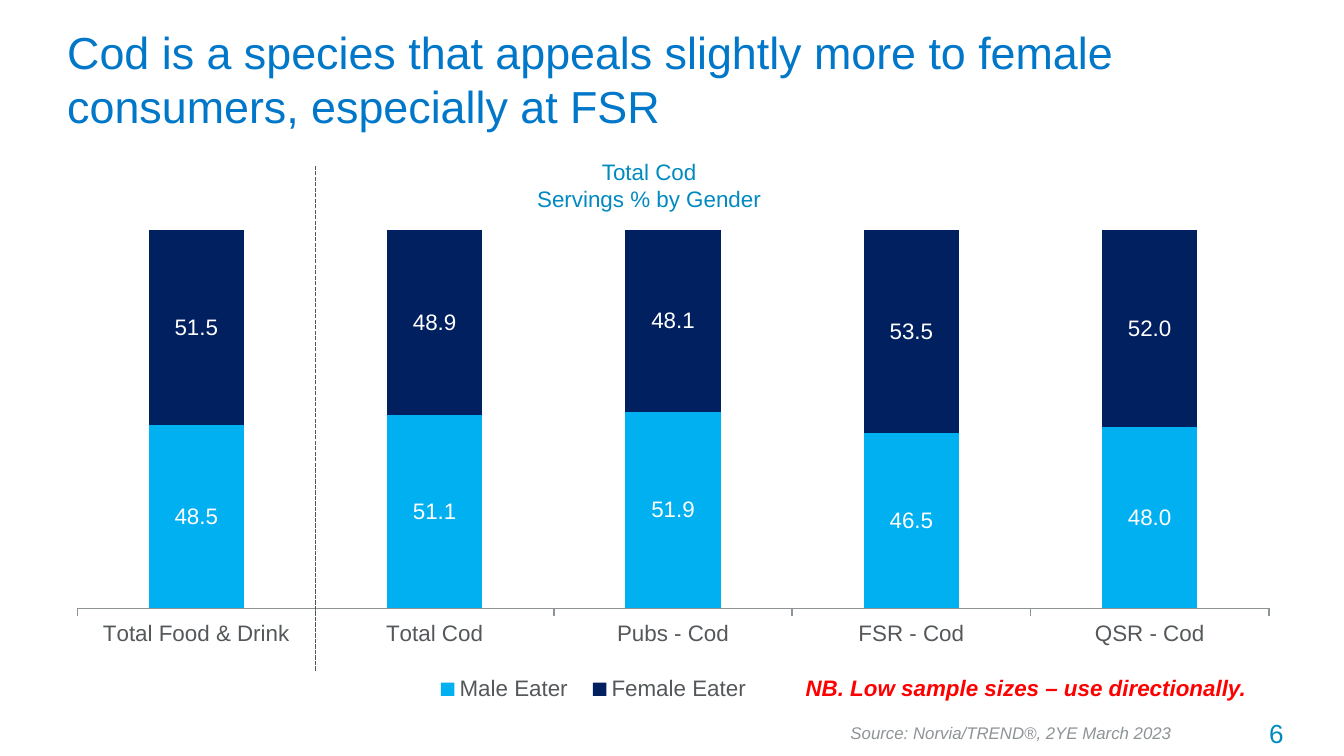
from lxml.etree import SubElement
from pptx import Presentation
from pptx.chart.data import CategoryChartData
from pptx.dml.color import RGBColor
from pptx.enum.chart import XL_CHART_TYPE, XL_LEGEND_POSITION, XL_TICK_MARK
from pptx.enum.dml import MSO_LINE
from pptx.enum.shapes import MSO_CONNECTOR
from pptx.enum.text import MSO_ANCHOR, MSO_AUTO_SIZE, PP_ALIGN
from pptx.oxml import parse_xml
from pptx.oxml.ns import nsdecls, qn
from pptx.util import Inches, Pt

FONT = "Arial"
TITLE_BLUE = RGBColor(0x00, 0x77, 0xC8)
TEAL = RGBColor(0x00, 0x8A, 0xC0)
SKY = RGBColor(0x00, 0xB0, 0xF0)
NAVY = RGBColor(0x00, 0x20, 0x60)
DARK_GREY = RGBColor(0x54, 0x58, 0x5A)
GREY = RGBColor(0x8E, 0x93, 0x96)
RED = RGBColor(0xFF, 0x00, 0x00)
WHITE = RGBColor(0xFF, 0xFF, 0xFF)

LEFT, WIDTH = 0.4, 9.17
CHART_TOP, CHART_HEIGHT = 1.52, 3.75
PLOT_X, PLOT_Y, PLOT_W, PLOT_H = 0.019, 0.052, 0.967, 0.75

categories = ["Total Food & Drink", "Total Cod", "Pubs - Cod", "FSR - Cod", "QSR - Cod"]
genders = [
    ("Male Eater", [48.5, 51.1, 51.9, 46.5, 48.0], SKY),
    ("Female Eater", [51.5, 48.9, 48.1, 53.5, 52.0], NAVY),
]


def write(shape, *lines, size=12, color=TEAL, align=PP_ALIGN.LEFT,
          bold=False, italic=False, wrap=True, resize=MSO_AUTO_SIZE.SHAPE_TO_FIT_TEXT):
    frame = shape.text_frame
    frame.word_wrap = wrap
    frame.auto_size = resize
    frame.text = "\n".join(lines)
    for paragraph in frame.paragraphs:
        paragraph.alignment = align
        font = paragraph.runs[0].font
        font.name, font.size, font.color.rgb = FONT, Pt(size), color
        font.bold, font.italic = bold, italic


def manual_layout(x, y, w, h, inner=False):
    """Chart layout element with its position as shares of the chart's size."""
    layout = parse_xml(f"<c:layout {nsdecls('c')}><c:manualLayout/></c:layout>")
    settings = [("layoutTarget", "inner")] if inner else []
    settings += [("xMode", "edge"), ("yMode", "edge"), ("x", x), ("y", y), ("w", w), ("h", h)]
    for tag, value in settings:
        SubElement(layout[0], qn(f"c:{tag}")).set("val", str(value))
    return layout


prs = Presentation()
prs.slide_width = Inches(10)
prs.slide_height = prs.slide_width * 9 // 16
slide = prs.slides.add_slide(prs.slide_layouts[5])
shapes = slide.shapes

title = shapes.title
title.left, title.top, title.width, title.height = map(Inches, (LEFT, 0.23, WIDTH, 0.71))
write(title, "Cod is a species that appeals slightly more to female consumers, especially at FSR",
      size=24, color=TITLE_BLUE, resize=MSO_AUTO_SIZE.NONE)
title.text_frame.vertical_anchor = MSO_ANCHOR.MIDDLE

# Stacked columns
servings = CategoryChartData(number_format="#,##0.0")
servings.categories = categories
for gender, shares, _ in genders:
    servings.add_series(gender, shares)
chart = shapes.add_chart(
    XL_CHART_TYPE.COLUMN_STACKED_100, Inches(LEFT), Inches(CHART_TOP),
    Inches(WIDTH), Inches(CHART_HEIGHT), servings).chart
chart.has_title = False
chart.font.name, chart.font.size, chart.font.color.rgb = FONT, Pt(12), DARK_GREY

plot = chart.plots[0]
plot.gap_width, plot.overlap = 150, 100
for series, (_, _, color) in zip(plot.series, genders):
    series.format.fill.solid()
    series.format.fill.fore_color.rgb = color
    labels = series.data_labels
    labels.show_value = True
    labels.number_format, labels.number_format_is_linked = "#,##0.0", False
    labels.font.name, labels.font.size, labels.font.color.rgb = FONT, Pt(12), WHITE

chart.value_axis.visible = False
chart.value_axis.has_major_gridlines = False
chart.category_axis.major_tick_mark = XL_TICK_MARK.OUTSIDE
chart.category_axis.format.line.color.rgb = GREY

chart.has_legend = True
legend = chart.legend
legend.position = XL_LEGEND_POSITION.BOTTOM
legend.include_in_layout = False
legend_xml = legend._element
for old in legend_xml.findall(qn("c:layout")):
    legend_xml.remove(old)
legend_xml.find(qn("c:legendPos")).addnext(manual_layout(0.3, 0.925, 0.276, 0.08))

plot_area = chart._chartSpace.chart.plotArea
for old in plot_area.findall(qn("c:layout")):
    plot_area.remove(old)
plot_area.insert(0, manual_layout(PLOT_X, PLOT_Y, PLOT_W, PLOT_H, inner=True))

# Divider after the first category
divider_x = Inches(LEFT + WIDTH * (PLOT_X + PLOT_W / len(categories)))
divider = shapes.add_connector(
    MSO_CONNECTOR.STRAIGHT, divider_x, Inches(4.99), divider_x, Inches(1.23))
divider.line.color.rgb = DARK_GREY
divider.line.width = Pt(0.75)
divider.line.dash_style = MSO_LINE.SQUARE_DOT
SubElement(divider._element.spPr, qn("a:effectLst"))

# Captions and notes
captions = [
    ((3.89, 1.13, 1.88, 0.5), ["Total Cod", "Servings % by Gender"],
     dict(align=PP_ALIGN.CENTER, wrap=False)),
    ((8.85, 5.29, 0.8, 0.34), ["6"], dict(size=14, align=PP_ALIGN.RIGHT)),
    ((5.7, 4.97, 3.87, 0.3), ["NB. Low sample sizes – use directionally."],
     dict(color=RED, align=PP_ALIGN.CENTER, bold=True, italic=True)),
    ((6.23, 5.33, 2.67, 0.25), ["Source: Norvia/TREND®, 2YE March 2023"],
     dict(size=9, color=GREY, italic=True, wrap=False)),
]
for box, lines, style in captions:
    write(shapes.add_textbox(*map(Inches, box)), *lines, **style)

prs.save("out.pptx")
